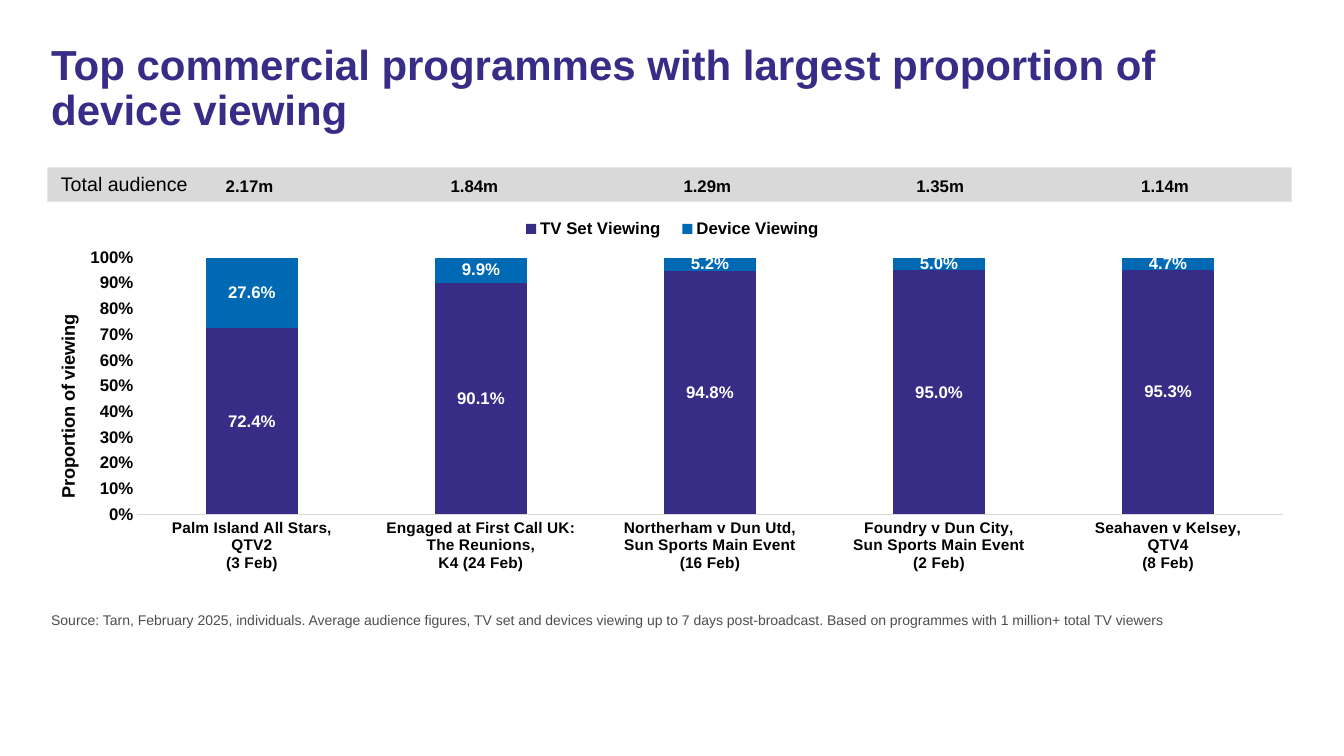
from lxml import etree
from pptx import Presentation
from pptx.chart.data import CategoryChartData
from pptx.dml.color import RGBColor
from pptx.enum import chart as charts, shapes, text
from pptx.oxml import ns
from pptx.util import Inches, Pt

INDIGO = RGBColor(0x37, 0x2D, 0x87)
BLUE = RGBColor(0x00, 0x69, 0xB4)
BLACK = RGBColor(0, 0, 0)
WHITE = RGBColor(255, 255, 255)
LIGHT_GREY = RGBColor(0xD9, 0xD9, 0xD9)
DARK_GREY = RGBColor(0x4D, 0x4D, 0x4D)
FONT = "Arial"

TITLE = "Top commercial programmes with largest proportion of device viewing"
SOURCE = ("Source: Tarn, February 2025, individuals. Average audience figures, "
          "TV set and devices viewing up to 7 days post-broadcast. "
          "Based on programmes with 1 million+ total TV viewers")
AXIS_TITLE = "Proportion of viewing"
PROGRAMMES = [
    "Palm Island All Stars,\nQTV2\n(3 Feb)",
    "Engaged at First Call UK: The Reunions,\nK4 (24 Feb)",
    "Northerham v Dun Utd,\nSun Sports Main Event\n(16 Feb)",
    "Foundry v Dun City,\nSun Sports Main Event\n(2 Feb)",
    "Seahaven v Kelsey,\nQTV4\n(8 Feb)",
]
SERIES = [
    ("TV Set Viewing", INDIGO, (0.724, 0.901, 0.948, 0.950, 0.953)),
    ("Device Viewing", BLUE, (0.276, 0.099, 0.052, 0.050, 0.047)),
]
AUDIENCES = [("2.17m", 2), ("1.84m", 4.23), ("1.29m", 6.54),
             ("1.35m", 8.85), ("1.14m", 11.08)]


def style_font(font, size, color, bold=True):
    font.name = FONT
    font.size = Pt(size)
    font.bold = bold
    font.color.rgb = color


def add_text(slide, box, content, size, color, bold=False,
             align=text.PP_ALIGN.LEFT, line_spacing=None):
    frame = slide.shapes.add_textbox(*map(Inches, box)).text_frame
    frame.word_wrap = True
    paragraph = frame.paragraphs[0]
    paragraph.alignment = align
    if line_spacing:
        paragraph.line_spacing = line_spacing
    run = paragraph.add_run()
    run.text = content
    style_font(run.font, size, color, bold)


def place(element, x, y, width=None, height=None, inner=False):
    for old in element.findall(ns.qn("c:layout")):
        element.remove(old)
    layout = etree.Element(ns.qn("c:layout"))
    manual = etree.SubElement(layout, ns.qn("c:manualLayout"))
    settings = [("layoutTarget", "inner" if inner else None),
                ("xMode", "edge"), ("yMode", "edge"),
                ("x", x), ("y", y), ("w", width), ("h", height)]
    for tag, value in settings:
        if value is not None:
            etree.SubElement(manual, ns.qn("c:" + tag)).set("val", str(value))
    previous = [child for child in element
                if child.tag in (ns.qn("c:tx"), ns.qn("c:legendPos"))]
    element.insert(element.index(previous[0]) + 1 if previous else 0, layout)


def add_viewing_chart(slide):
    data = CategoryChartData(number_format="0.0%")
    data.categories = PROGRAMMES
    for name, color, values in SERIES:
        data.add_series(name, values)
    chart = slide.shapes.add_chart(
        charts.XL_CHART_TYPE.COLUMN_STACKED_100,
        *map(Inches, (0.47, 1.36, 12.4, 4.8)), data).chart
    style_font(chart.font, 10, BLACK, False)
    chart.has_title = False

    plot = chart.plots[0]
    plot.gap_width = 150
    plot.overlap = 100
    plot.vary_by_categories = False
    for series, (name, color, values) in zip(plot.series, SERIES):
        series.format.fill.solid()
        series.format.fill.fore_color.rgb = color
        labels = series.data_labels
        labels.show_value = True
        labels.number_format = "0.0%"
        labels.number_format_is_linked = False
        style_font(labels.font, 12, WHITE)

    category_axis, value_axis = chart.category_axis, chart.value_axis
    for axis, size in ((category_axis, 11), (value_axis, 12)):
        axis.major_tick_mark = charts.XL_TICK_MARK.NONE
        axis.minor_tick_mark = charts.XL_TICK_MARK.NONE
        axis.has_major_gridlines = False
        style_font(axis.tick_labels.font, size, BLACK)
    category_axis.format.line.color.rgb = LIGHT_GREY
    category_axis.format.line.width = Pt(0.75)
    value_axis.format.line.fill.background()
    value_axis.minimum_scale = 0
    value_axis.maximum_scale = 1
    value_axis.major_unit = 0.1
    value_axis.tick_labels.number_format = "0%"
    value_axis.tick_labels.number_format_is_linked = False
    axis_title = value_axis.axis_title
    run = axis_title.text_frame.paragraphs[0].add_run()
    run.text = AXIS_TITLE
    style_font(run.font, 13, BLACK)

    chart.has_legend = True
    legend = chart.legend
    legend.position = charts.XL_LEGEND_POSITION.BOTTOM
    legend.include_in_layout = False
    style_font(legend.font, 12, BLACK)

    plot_area = chart._chartSpace.chart.plotArea
    place(plot_area, 0.072, 0.249, 0.916, 0.531, inner=True)
    place(legend._element, 0.37, 0.16, 0.26, 0.06)
    place(axis_title._element, 0.005, 0.36)


def main():
    presentation = Presentation()
    presentation.slide_width = Inches(13.33)
    presentation.slide_height = Inches(7.5)
    slide = presentation.slides.add_slide(presentation.slide_layouts[6])

    band = slide.shapes.add_shape(shapes.MSO_SHAPE.RECTANGLE,
                                  *map(Inches, (0.47, 1.66, 12.34, 0.34)))
    band.shadow.inherit = False
    band.fill.solid()
    band.fill.fore_color.rgb = LIGHT_GREY
    band.line.fill.background()

    add_viewing_chart(slide)
    add_text(slide, (0.41, 0.39, 12.4, 1.12), TITLE, 30, INDIGO, True,
             line_spacing=0.9)
    add_text(slide, (0.41, 6.02, 12.4, 0.33), SOURCE, 10, DARK_GREY)
    add_text(slide, (0.16, 1.66, 1.8, 0.34), "Total audience", 14, BLACK,
             align=text.PP_ALIGN.RIGHT)
    for audience, left in AUDIENCES:
        add_text(slide, (left, 1.69, 0.95, 0.3), audience, 12, BLACK, True,
                 text.PP_ALIGN.CENTER)
    presentation.save("out.pptx")


if __name__ == "__main__":
    main()
